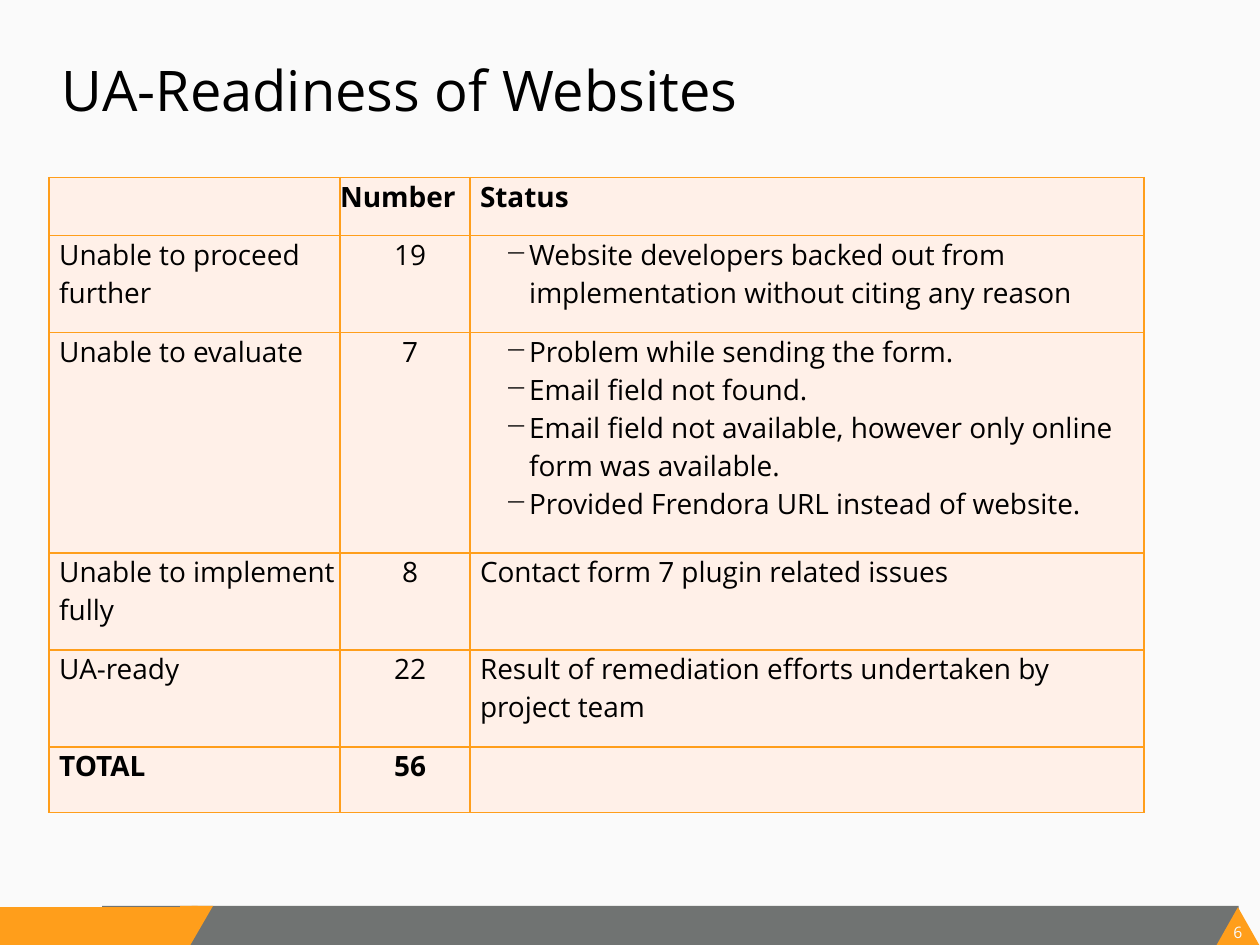
from dataclasses import dataclass
from typing import Optional

import pptx
import pptx.dml.color
import pptx.enum.shapes
import pptx.enum.text
import pptx.oxml
import pptx.oxml.ns
import pptx.util
from pptx.util import Inches

FONT = "Open Sans"
BLACK = "000000"
ORANGE = "FF9E1B"
GREY = "707372"
PAPER = "FAFAFA"
PEACH = "FFF0E8"
SHAPES = pptx.enum.shapes.MSO_SHAPE
ALIGN = pptx.enum.text.PP_ALIGN
ANCHOR = pptx.enum.text.MSO_ANCHOR
AUTO_SIZE = pptx.enum.text.MSO_AUTO_SIZE


@dataclass(frozen=True)
class FooterPart:
    kind: SHAPES
    left: float
    top: float
    width: float
    height: float
    color: str
    rotation: float = 0
    slant: Optional[float] = None


@dataclass(frozen=True)
class ReadinessRow:
    category: str
    number: str
    status: tuple[str, ...]
    height: float
    bold: bool = False
    bulleted: bool = False


FOOTER = (
    FooterPart(SHAPES.RECTANGLE, 0.81, 7.19, 9.02, 0.31, GREY),
    FooterPart(SHAPES.RECTANGLE, 0, 7.2, 1.5, 0.31, ORANGE),
    FooterPart(SHAPES.ISOSCELES_TRIANGLE, 9.65, 7.2, 0.35, 0.31, ORANGE),
    FooterPart(SHAPES.PARALLELOGRAM, 1.34, 7.19, 0.35, 0.31, ORANGE, 180, 0.58),
    FooterPart(SHAPES.RECTANGLE, 1.43, 7.19, 0.14, 0.13, ORANGE),
)
COLUMN_WIDTHS = (2.31, 1.03, 5.35)
ROWS = (
    ReadinessRow("", "Number", ("Status",), 0.46, bold=True),
    ReadinessRow(
        "Unable to proceed further", "19",
        ("Website developers backed out from implementation without citing any reason",),
        0.77, bulleted=True),
    ReadinessRow(
        "Unable to evaluate", "7",
        ("Problem while sending the form.",
         "Email field not found.",
         "Email field not available, however only online form was available.",
         "Provided Frendora URL instead of website."),
        1.75, bulleted=True),
    ReadinessRow("Unable to implement fully", "8",
                 ("Contact form 7 plugin related issues",), 0.77),
    ReadinessRow("UA-ready", "22",
                 ("Result of remediation efforts undertaken by project team",), 0.77),
    ReadinessRow("TOTAL", "56", ("",), 0.52, bold=True),
)


def rgb(value: str) -> pptx.dml.color.RGBColor:
    return pptx.dml.color.RGBColor.from_string(value)


def paint(fill, color: str) -> None:
    fill.solid()
    fill.fore_color.rgb = rgb(color)


def set_font(paragraph, size: float, color: str, bold: bool = False) -> None:
    paragraph.font.name = FONT
    paragraph.font.size = pptx.util.Pt(size)
    paragraph.font.bold = bold
    paragraph.font.color.rgb = rgb(color)


def set_margins(frame, margin: float) -> None:
    frame.margin_left = frame.margin_right = Inches(margin)
    frame.margin_top = frame.margin_bottom = Inches(margin)


def draw_footer_part(slide, part: FooterPart) -> None:
    shape = slide.shapes.add_shape(
        part.kind, Inches(part.left), Inches(part.top),
        Inches(part.width), Inches(part.height))
    shape.shadow.inherit = False
    shape.rotation = part.rotation
    if part.slant is not None:
        shape.adjustments[0] = part.slant
    paint(shape.fill, part.color)
    shape.line.fill.background()


def draw_page_number(slide, number: str) -> None:
    page = slide.shapes.add_textbox(
        Inches(9.74), Inches(7.32), Inches(0.17), Inches(0.15))
    frame = page.text_frame
    frame.word_wrap = False
    set_margins(frame, 0)
    frame.text = number
    frame.paragraphs[0].alignment = ALIGN.CENTER
    set_font(frame.paragraphs[0], 9, PAPER)


def write_title(slide, text: str) -> None:
    title = slide.shapes.title
    title.left, title.top = Inches(0.39), Inches(0.35)
    title.width, title.height = Inches(6.65), Inches(0.65)
    frame = title.text_frame
    frame.text = text
    frame.word_wrap = True
    frame.auto_size = AUTO_SIZE.NONE
    frame.vertical_anchor = ANCHOR.TOP
    heading = frame.paragraphs[0]
    heading.alignment = ALIGN.LEFT
    heading.line_spacing = 1.07
    set_font(heading, 32, BLACK)


def set_indent(paragraph, left: float, first: float = 0, bullet: str = "") -> None:
    properties = paragraph._p.get_or_add_pPr()
    properties.set("marL", str(Inches(left)))
    properties.set("indent", str(Inches(first)))
    if bullet:
        marker = pptx.oxml.parse_xml(
            f'<a:buChar {pptx.oxml.ns.nsdecls("a")} char="{bullet}"/>')
        properties.append(marker)


def style_cell(cell) -> None:
    properties = cell._tc.get_or_add_tcPr()
    for side in "LRTB":
        properties.append(pptx.oxml.parse_xml(
            f'<a:ln{side} {pptx.oxml.ns.nsdecls("a")} w="12700"><a:solidFill>'
            f'<a:srgbClr val="{ORANGE}"/></a:solidFill></a:ln{side}>'))
    paint(cell.fill, PEACH)
    set_margins(cell, 0)
    cell.margin_bottom = Inches(0.07)


def write_cell(cell, lines: tuple[str, ...], bold: bool, indent: float = 0.08,
               centered: bool = False, bulleted: bool = False) -> None:
    style_cell(cell)
    cell.text = "\n".join(lines)
    for paragraph in cell.text_frame.paragraphs:
        if bulleted:
            set_indent(paragraph, 0.47, -0.19, "−")
        else:
            set_indent(paragraph, indent)
        paragraph.alignment = ALIGN.CENTER if centered else ALIGN.LEFT
        set_font(paragraph, 16, BLACK, bold)


def draw_readiness_table(slide) -> None:
    table = slide.shapes.add_table(
        len(ROWS), len(COLUMN_WIDTHS), Inches(0.39), Inches(1.41),
        Inches(sum(COLUMN_WIDTHS)), Inches(sum(row.height for row in ROWS))).table
    table.horz_banding = False
    table.first_row = False
    for column, width in zip(table.columns, COLUMN_WIDTHS):
        column.width = Inches(width)
    for index, row in enumerate(ROWS):
        table.rows[index].height = Inches(row.height)
        category, number, status = table.rows[index].cells
        is_header = index == 0
        write_cell(category, (row.category,), row.bold)
        write_cell(number, (row.number,), row.bold,
                   indent=0 if is_header else 0.08, centered=not is_header)
        write_cell(status, row.status, row.bold, bulleted=row.bulleted)


def main() -> None:
    deck = pptx.Presentation()
    deck.slide_width, deck.slide_height = Inches(10), Inches(7.5)
    slide = deck.slides.add_slide(deck.slide_layouts.get_by_name("Title Only"))
    paint(slide.background.fill, PAPER)
    for part in FOOTER[:3]:
        draw_footer_part(slide, part)
    draw_page_number(slide, "6")
    for part in FOOTER[3:]:
        draw_footer_part(slide, part)
    write_title(slide, "UA-Readiness of Websites")
    draw_readiness_table(slide)
    deck.save("out.pptx")


if __name__ == "__main__":
    main()
